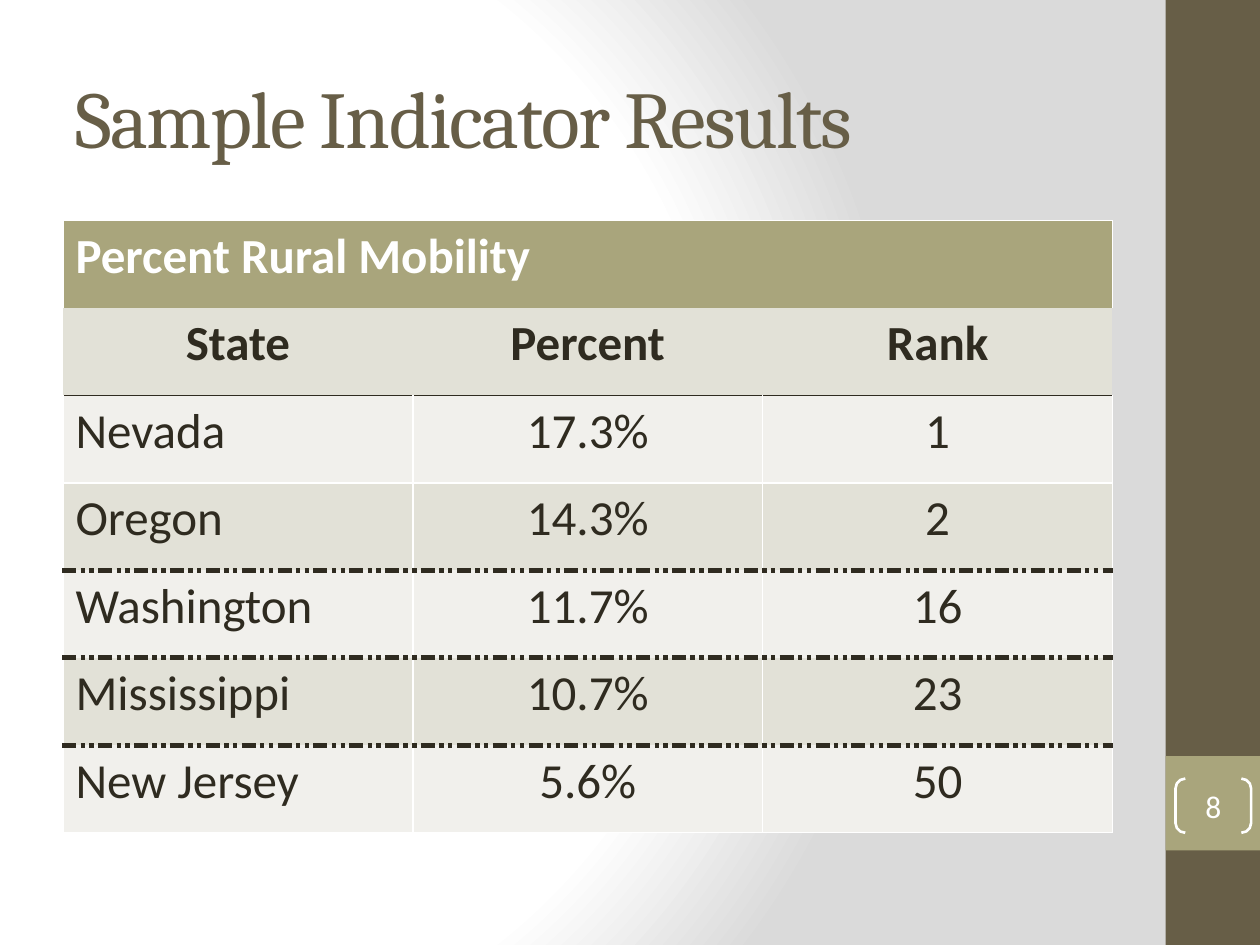
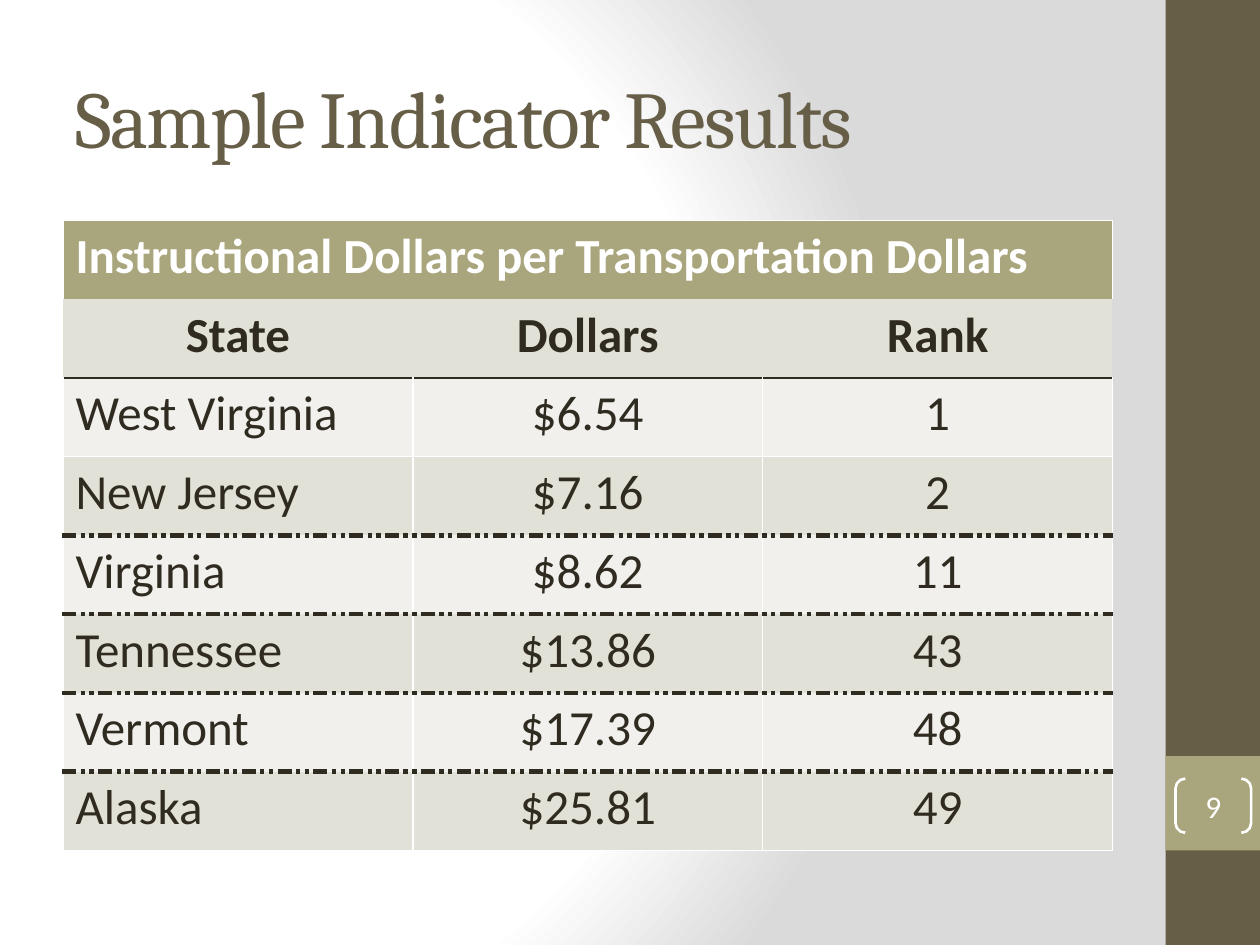
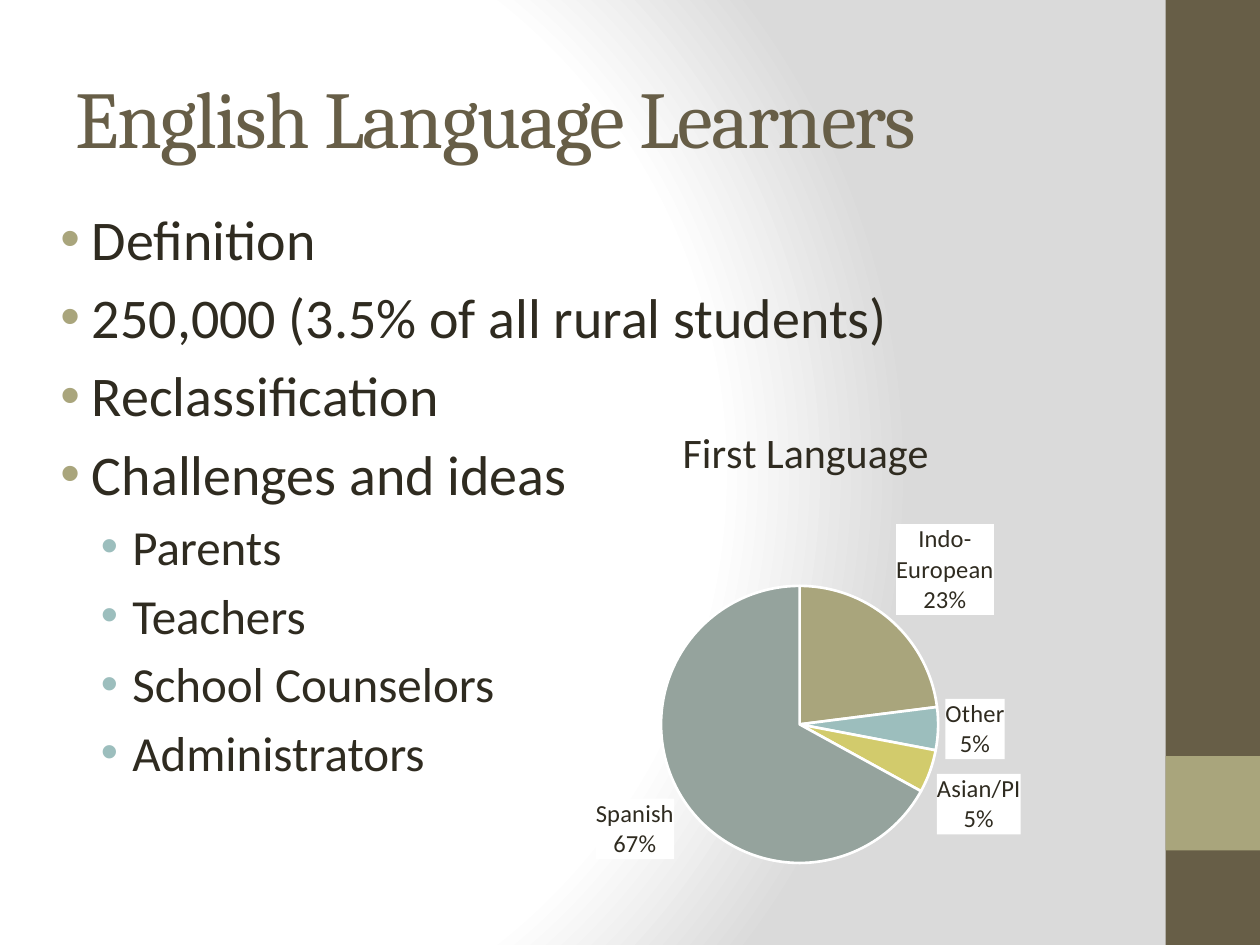
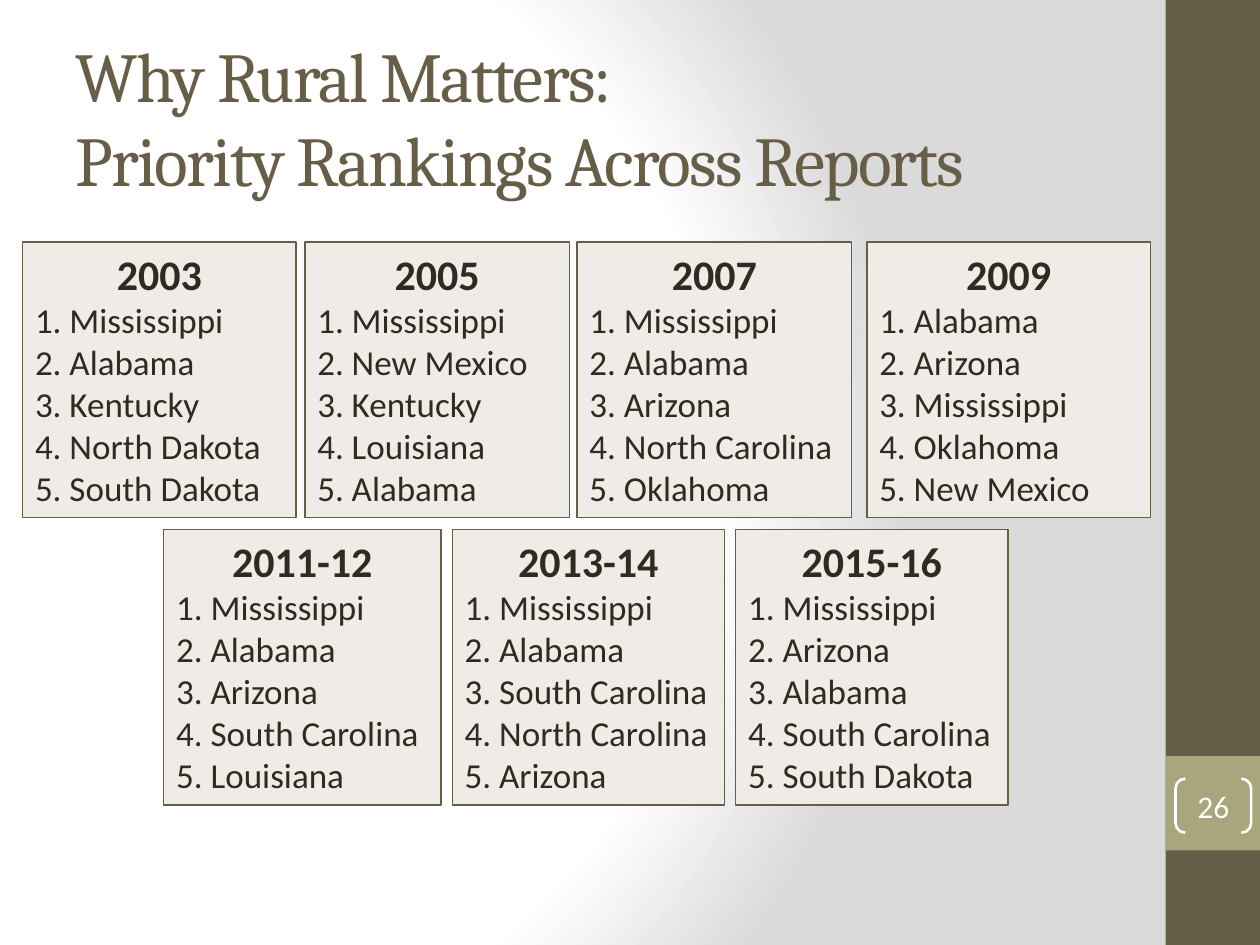
from dataclasses import dataclass

from pptx import Presentation
from pptx.chart.data import CategoryChartData
from pptx.dml.color import RGBColor
from pptx.enum import chart as charts, shapes, text
from pptx.oxml import parse_xml
from pptx.oxml.ns import nsdecls
from pptx.util import Inches, Pt


@dataclass(frozen=True)
class Theme:
    heading_font: str = "Cambria"
    body_font: str = "Calibri"
    brown: str = "675E47"
    olive: str = "A9A57C"
    teal: str = "9CBEBD"
    yellow: str = "D2CB6C"
    sage: str = "95A39D"
    ink: str = "2F2B20"
    white: str = "FFFFFF"
    shade: str = "DADADA"
    row_dark: str = "E2E1D7"
    row_light: str = "F1F0EC"
    card: str = "EFECE7"
    title: int = 46
    long_title: int = 40
    bullet: int = 32
    sub_bullet: int = 28
    table: int = 28
    heading: int = 24
    item: int = 20
    number: int = 18
    label: int = 14


THEME = Theme()
TITLE_ONLY, TITLE_AND_BODY = 5, 1
TITLE_BOX = (0.5, 0.3, 8.33, 1.25)
BAND_BOX = (9.25, 0, 0.75, 7.5)
TAB_BOX = (9.25, 6, 0.75, 0.75)
NUMBER_BOX = (9.33, 6.18, 0.6, 0.43)

WHITE_LINE = (THEME.white, 1, "solid")
DARK_LINE = (THEME.ink, 1, "solid")
DASHED_LINE = (THEME.ink, 3, "sysDashDotDot")


def rgb(color):
    return RGBColor.from_string(color)


def inches(box):
    return [Inches(length) for length in box]


def place(shape, box):
    shape.left, shape.top, shape.width, shape.height = inches(box)


def set_font(font, size, color=THEME.ink, bold=False):
    font.name, font.size, font.bold = THEME.body_font, Pt(size), bold
    font.color.rgb = rgb(color)


def add_box(page, kind, box, fill=None, line=None, line_width=0.75):
    """Add a preset shape without shadow; leave out fill or line if none is given."""
    shape = page.shapes.add_shape(kind, *inches(box))
    shape.shadow.inherit = False
    if fill:
        shape.fill.solid()
        shape.fill.fore_color.rgb = rgb(fill)
    else:
        shape.fill.background()
    if line:
        shape.line.color.rgb = rgb(line)
        shape.line.width = Pt(line_width)
    else:
        shape.line.fill.background()
    return shape


def style_background(master):
    master.background.fill.solid()
    plain = master.element.xpath(".//p:bgPr/a:solidFill")[0]
    stops = "".join(
        f'<a:gs pos="{position * 1000}"><a:srgbClr val="{color}"/></a:gs>'
        for position, color in ((0, THEME.white), (75, THEME.white), (100, THEME.shade)))
    plain.getparent().replace(plain, parse_xml(
        f'<a:gradFill {nsdecls("a")} rotWithShape="1"><a:gsLst>{stops}</a:gsLst>'
        '<a:path path="circle">'
        '<a:fillToRect l="20000" t="50000" r="100000" b="50000"/>'
        '</a:path></a:gradFill>'))


def style_text_level(master, style, level, paragraph, size, color, font, spacing=0):
    """Replace one level of the master's title or body text style."""
    old = master.element.xpath(f"p:txStyles/p:{style}/a:lvl{level}pPr")[0]
    attributes, details = paragraph
    old.getparent().replace(old, parse_xml(
        f'<a:lvl{level}pPr {nsdecls("a")} algn="l" {attributes}>{details}'
        f'<a:defRPr sz="{size * 100}" spc="{spacing}">'
        f'<a:solidFill><a:srgbClr val="{color}"/></a:solidFill>'
        f'<a:latin typeface="{font}"/></a:defRPr></a:lvl{level}pPr>'))


def style_master(master):
    style_background(master)
    place(master.placeholders[0], TITLE_BOX)
    style_text_level(master, "titleStyle", 1, ("", "<a:buNone/>"),
                     THEME.title, THEME.brown, THEME.heading_font, -100)
    levels = ((0.38, THEME.olive, THEME.bullet), (0.7, THEME.teal, THEME.sub_bullet))
    for level, (margin, bullet_color, size) in enumerate(levels, 1):
        attributes = f'marL="{Inches(margin)}" indent="{Inches(-0.25)}"'
        details = ('<a:spcBef><a:spcPct val="20000"/></a:spcBef>'
                   f'<a:buClr><a:srgbClr val="{bullet_color}"/></a:buClr>'
                   '<a:buFont typeface="Arial"/><a:buChar char="•"/>')
        style_text_level(master, "bodyStyle", level, (attributes, details),
                         size, THEME.ink, THEME.body_font)


def move_bands_to_master(page, master):
    """Build the side band and its tab, then hand them to the master."""
    for position, (box, fill) in enumerate(
            ((BAND_BOX, THEME.brown), (TAB_BOX, THEME.olive)), 2):
        band = add_box(page, shapes.MSO_SHAPE.RECTANGLE, box, fill)
        master.shapes.element.insert(position, band.element)


def add_page(deck, layout, title, number=None, title_size=None):
    page = deck.slides.add_slide(deck.slide_layouts[layout])
    page.shapes.title.text_frame.text = title
    if title_size:
        for paragraph in page.shapes.title.text_frame.paragraphs:
            paragraph.font.size = Pt(title_size)
    if number:
        add_page_number(page, NUMBER_BOX, number)
    return page


def add_page_number(page, box, number):
    bracket = add_box(page, shapes.MSO_SHAPE.DOUBLE_BRACKET, box,
                      line=THEME.white, line_width=1.5)
    bracket.adjustments[0] = 0.18
    frame = bracket.text_frame
    frame.margin_left = frame.margin_top = frame.margin_right = frame.margin_bottom = 0
    frame.vertical_anchor = text.MSO_ANCHOR.MIDDLE
    paragraph = frame.paragraphs[0]
    paragraph.text = str(number)
    paragraph.alignment = text.PP_ALIGN.CENTER
    set_font(paragraph.font, THEME.number, THEME.white)


def set_borders(cell, **lines):
    """Draw the L, R, T and B borders; None hides a border."""
    properties = cell._tc.get_or_add_tcPr()
    for side in "LRTB":
        if lines[side]:
            color, width, dash = lines[side]
            size = f'w="{Pt(width)}"'
            details = (f'<a:solidFill><a:srgbClr val="{color}"/></a:solidFill>'
                       f'<a:prstDash val="{dash}"/>')
        else:
            size, details = "", "<a:noFill/>"
        properties.append(parse_xml(
            f'<a:ln{side} {nsdecls("a")} {size}>{details}</a:ln{side}>'))


def line_below(row, last):
    if row == last:
        return WHITE_LINE
    return {-1: WHITE_LINE, 0: None, 1: DARK_LINE, 2: WHITE_LINE}.get(row, DASHED_LINE)


def add_ranking_table(page, box, caption, headings, records):
    rows = [(caption, "", ""), headings, *records]
    last = len(rows) - 1
    frame = page.shapes.add_table(len(rows), len(headings), *inches(box))
    table = frame.table
    table.first_row = table.horz_banding = False
    for row in table.rows:
        row.height = Inches(box[3] / len(rows))
    for column in table.columns:
        column.width = Inches(box[2] / len(headings))
    for r, values in enumerate(rows):
        side = None if r == 1 else WHITE_LINE
        fill = THEME.olive if r == 0 else (THEME.row_light, THEME.row_dark)[r % 2]
        for c, value in enumerate(values):
            cell = table.cell(r, c)
            set_borders(cell, L=side, R=side, T=line_below(r - 1, last),
                        B=line_below(r, last))
            cell.fill.solid()
            cell.fill.fore_color.rgb = rgb(fill)
            paragraph = cell.text_frame.paragraphs[0]
            paragraph.text = value
            if r == 1 or (r > 1 and c > 0):
                paragraph.alignment = text.PP_ALIGN.CENTER
            set_font(paragraph.font, THEME.table,
                     THEME.white if r == 0 else THEME.ink, bold=r < 2)
    table.cell(0, 0).merge(table.cell(0, len(headings) - 1))


def fill_bullets(body, box, bullets):
    place(body, box)
    frame = body.text_frame
    for position, (level, words) in enumerate(bullets):
        paragraph = frame.add_paragraph() if position else frame.paragraphs[0]
        paragraph.text, paragraph.level = words, level


def add_language_pie(page, box, title, shares):
    data = CategoryChartData()
    data.categories = [language for language, _, _ in shares]
    data.add_series("Series 1", [share for _, share, _ in shares])
    chart = page.shapes.add_chart(charts.XL_CHART_TYPE.PIE, *inches(box), data).chart
    set_font(chart.font, 10)
    chart.has_legend = False
    chart.has_title = True
    heading = chart.chart_title.text_frame.paragraphs[0]
    heading.add_run().text = title
    set_font(heading.runs[0].font, THEME.heading)

    plot = chart.plots[0]
    plot.vary_by_categories = True
    series = plot.series[0]
    for position, (_, _, color) in enumerate(shares):
        slice_format = series.points[position].format
        slice_format.fill.solid()
        slice_format.fill.fore_color.rgb = rgb(color)
        slice_format.line.color.rgb = rgb(THEME.white)
        slice_format.line.width = Pt(1.5)

    labels = series.data_labels
    labels.show_category_name = labels.show_percentage = True
    labels.show_value = False
    labels.number_format, labels.number_format_is_linked = "0%", False
    labels.position = charts.XL_LABEL_POSITION.OUTSIDE_END
    set_font(labels.font, THEME.label)
    label_text = chart.element.xpath(".//c:ser/c:dLbls/c:txPr")[0]
    label_text.addprevious(parse_xml(
        f'<c:spPr {nsdecls("c", "a")}><a:solidFill>'
        f'<a:srgbClr val="{THEME.white}"/></a:solidFill></c:spPr>'))
    set_plot_area(chart, (0.26, 0.37, 0.46, 0.55))


def set_plot_area(chart, fractions):
    area = chart.element.xpath(".//c:plotArea")[0]
    for old in area.xpath("c:layout"):
        area.remove(old)
    places = "".join(f'<c:{name} val="{value}"/>'
                     for name, value in zip("xywh", fractions))
    area.insert(0, parse_xml(
        f'<c:layout {nsdecls("c")}><c:manualLayout><c:layoutTarget val="inner"/>'
        '<c:xMode val="edge"/><c:yMode val="edge"/>'
        f'{places}</c:manualLayout></c:layout>'))


def add_ranking_card(page, box, year, states):
    card = add_box(page, shapes.MSO_SHAPE.RECTANGLE, box, THEME.card, THEME.brown)
    frame = card.text_frame
    frame.word_wrap = True
    frame.auto_size = text.MSO_AUTO_SIZE.SHAPE_TO_FIT_TEXT
    frame.vertical_anchor = text.MSO_ANCHOR.TOP
    heading = frame.paragraphs[0]
    heading.text = year
    heading.alignment = text.PP_ALIGN.CENTER
    set_font(heading.font, THEME.heading, bold=True)
    for rank, state in enumerate(states, 1):
        paragraph = frame.add_paragraph()
        paragraph.text = f"{rank}. {state}"
        paragraph.alignment = text.PP_ALIGN.LEFT
        set_font(paragraph.font, THEME.item)


def add_table_page(deck, number, height, caption, measure, records):
    page = add_page(deck, TITLE_ONLY, "Sample Indicator Results", number)
    add_ranking_table(page, (0.5, 1.75, 8.33, height), caption,
                      ("State", measure, "Rank"), records)
    return page


def add_learners_page(deck):
    page = add_page(deck, TITLE_AND_BODY, "English Language Learners")
    fill_bullets(page.placeholders[1], (0.25, 1.57, 8.92, 5.25), (
        (0, "Definition"),
        (0, "250,000 (3.5% of all rural students)"),
        (0, "Reclassification"),
        (0, "Challenges and ideas"),
        (1, "Parents"),
        (1, "Teachers"),
        (1, "School Counselors"),
        (1, "Administrators")))
    add_language_pie(page, (3.98, 3.17, 4.83, 4), "First Language", (
        ("Indo-European", 23, THEME.olive),
        ("Other", 5, THEME.teal),
        ("Asian/PI", 5, THEME.yellow),
        ("Spanish", 67, THEME.sage)))


def add_priority_page(deck):
    page = add_page(deck, TITLE_ONLY,
                    "Why Rural Matters:\vPriority Rankings Across Reports",
                    26, THEME.long_title)
    card_rows = (
        (1.92, (
            (0.18, 2.17, "2003", ("Mississippi", "Alabama", "Kentucky",
                                  "North Dakota", "South Dakota")),
            (2.42, 2.1, "2005", ("Mississippi", "New Mexico", "Kentucky",
                                 "Louisiana", "Alabama")),
            (4.58, 2.18, "2007", ("Mississippi", "Alabama", "Arizona",
                                  "North Carolina", "Oklahoma")),
            (6.88, 2.25, "2009", ("Alabama", "Arizona", "Mississippi",
                                  "Oklahoma", "New Mexico")))),
        (4.2, (
            (1.3, 2.2, "2011-12", ("Mississippi", "Alabama", "Arizona",
                                   "South Carolina", "Louisiana")),
            (3.59, 2.16, "2013-14", ("Mississippi", "Alabama", "South Carolina",
                                     "North Carolina", "Arizona")),
            (5.84, 2.16, "2015-16", ("Mississippi", "Arizona", "Alabama",
                                     "South Carolina", "South Dakota")))))
    for top, cards in card_rows:
        for left, width, year, states in cards:
            add_ranking_card(page, (left, top, width, 2.19), year, states)


def main():
    deck = Presentation()
    deck.slide_width, deck.slide_height = Inches(10), Inches(7.5)
    style_master(deck.slide_master)
    first = add_table_page(deck, 8, 4.86, "Percent Rural Mobility", "Percent", (
        ("Nevada", "17.3%", "1"),
        ("Oregon", "14.3%", "2"),
        ("Washington", "11.7%", "16"),
        ("Mississippi", "10.7%", "23"),
        ("New Jersey", "5.6%", "50")))
    move_bands_to_master(first, deck.slide_master)
    add_table_page(deck, 9, 5, "Instructional Dollars per Transportation Dollars",
                   "Dollars", (
                       ("West Virginia", "$6.54", "1"),
                       ("New Jersey", "$7.16", "2"),
                       ("Virginia", "$8.62", "11"),
                       ("Tennessee", "$13.86", "43"),
                       ("Vermont", "$17.39", "48"),
                       ("Alaska", "$25.81", "49")))
    add_learners_page(deck)
    add_priority_page(deck)
    deck.save("out.pptx")


if __name__ == "__main__":
    main()
